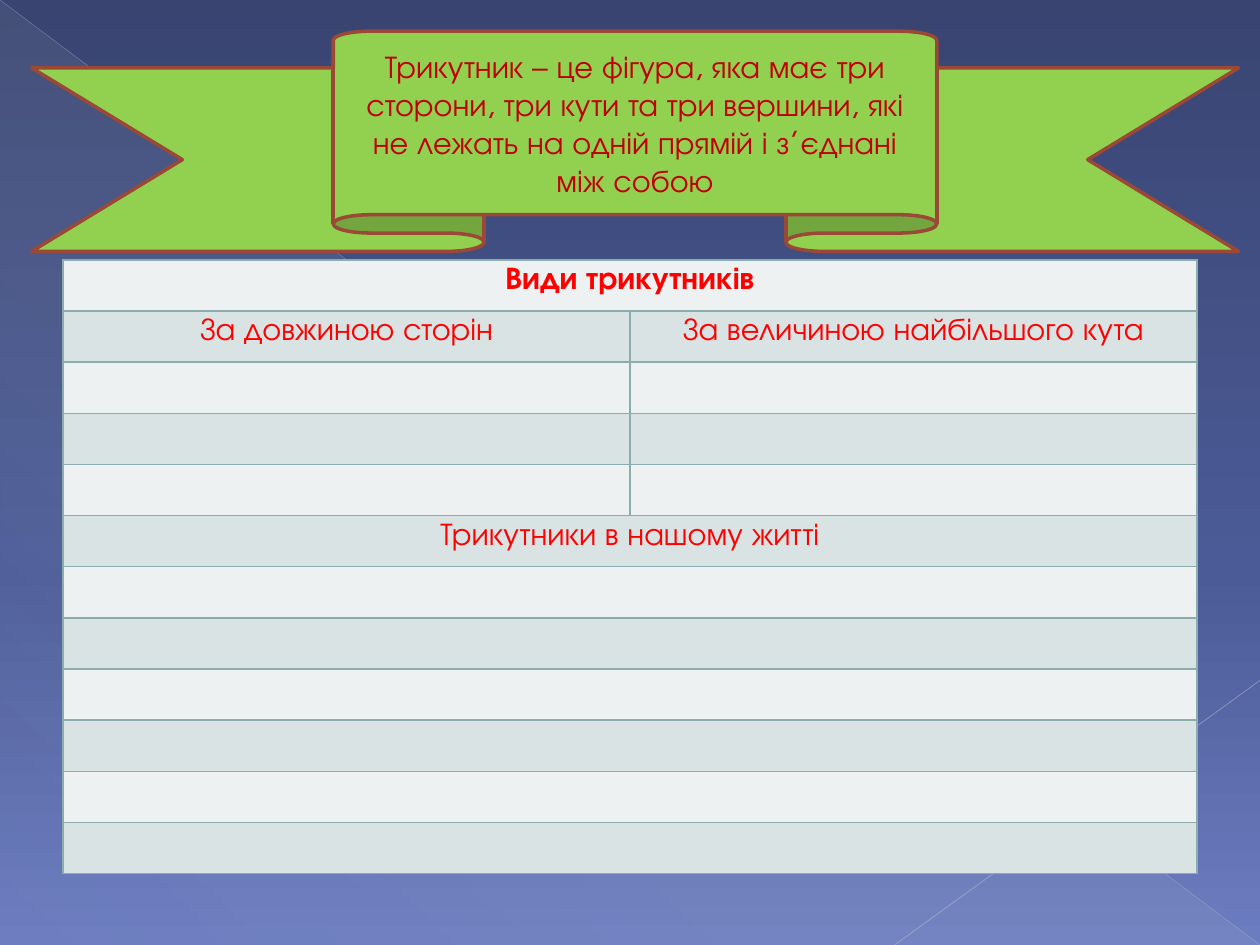
from dataclasses import dataclass
from lxml.etree import SubElement as Sub
from pptx import Presentation
from pptx.dml.color import RGBColor as Rgb
from pptx.enum.shapes import MSO_CONNECTOR as Conn, MSO_SHAPE as Form
from pptx.enum.text import MSO_ANCHOR as Anchor, PP_ALIGN as Align
from pptx.oxml.ns import qn
from pptx.util import Inches, Pt


@dataclass(frozen=True)
class Theme:
    font: str = "TeX Gyre Adventor"
    size: int = 18
    sky: tuple = ((0, "394471", 100), (60, "4B5B97", 100), (100, "6C7CC0", 100))
    haze: tuple = ((0, "C5D1D7", 10), (70, "C5D1D7", 8), (100, "C5D1D7", 1))
    bands: tuple = ("EEF1F2", "DAE3E3")
    grid: str = "8CADAE"
    head: str = "FF0000"
    green: str = "92D050"
    edge: str = "9B4936"
    note: str = "C00000"


T = Theme()
WIDE, HIGH = Inches(10), Inches(7.5)
ROWS = 12
HEADS = {
    0: ["Види трикутників"],
    1: ["За довжиною сторін", "За величиною найбільшого кута"],
    5: ["Трикутники в нашому житті"],
}
SPLIT = range(1, 5)  # rows that keep two columns
RULE = ("Трикутник – це фігура, яка має три сторони, три кути та три вершини, "
        "які не лежать на одній прямій і з’єднані між собою")


def area(left, top, width, height):
    """Turn shares of the slide into a box of lengths."""
    return int(left * WIDE), int(top * HIGH), int(width * WIDE), int(height * HIGH)


def tint(node, color, alpha):
    """Add a colour with an opacity in percent."""
    clr = Sub(node, qn("a:srgbClr"), val=color)
    if alpha < 100:
        Sub(clr, qn("a:alpha"), val=str(alpha * 1000))


def blend(fill, root, stops, angle):
    """Give a fill gradient stops; the angle runs clockwise."""
    fill.gradient()
    fill.gradient_angle = 360 - angle
    group = next(root.iter(qn("a:gsLst")))
    for old in list(group):
        group.remove(old)
    for pos, color, alpha in stops:
        tint(Sub(group, qn("a:gs"), pos=str(pos * 1000)), color, alpha)


def write(frame, text, color, bold=False):
    frame.text = text
    for para in frame.paragraphs:
        para.alignment = Align.CENTER
        for run in para.runs:
            font = run.font
            font.name, font.size, font.bold = T.font, Pt(T.size), bold
            font.color.rgb = Rgb.from_string(color)


def ray(slide, start, end, color, width, alpha):
    """Draw a faint line between two points given as shares of the slide."""
    (x1, y1), (x2, y2) = start, end
    line = slide.shapes.add_connector(
        Conn.STRAIGHT, int(x1 * WIDE), int(y1 * HIGH), int(x2 * WIDE), int(y2 * HIGH))
    line.line.width = Pt(width)
    line.line.fill.solid()
    line.line.color.rgb = Rgb.from_string(color)
    props = line._element.spPr
    clr = next(props.iter(qn("a:srgbClr")))
    Sub(clr, qn("a:alpha"), val=str(alpha * 1000))
    Sub(props, qn("a:effectLst"))


def backdrop(slide):
    blend(slide.background.fill, slide._element, T.sky, 90)
    haze = slide.shapes.add_shape(Form.RIGHT_TRIANGLE, *area(0, 0, 1, 1))
    haze.shadow.inherit = False
    haze.line.fill.background()
    blend(haze.fill, haze._element, T.haze, 133)
    ray(slide, (0, 0), (1, 1), "BABECD", 0.39, 35)
    ray(slide, (1, 0.72), (0.71, 1), "C2C5D2", 0.47, 45)


def border(cell):
    props = cell._tc.get_or_add_tcPr()
    for side in ("lnL", "lnR", "lnT", "lnB"):
        line = Sub(props, qn("a:" + side), w=str(Pt(1)))
        tint(Sub(line, qn("a:solidFill")), T.grid, 100)


def chart(slide, box):
    """Place the table of triangle kinds, with room to fill in."""
    table = slide.shapes.add_table(ROWS, 2, *box).table
    for idx, row in enumerate(table.rows):
        row.height = box[3] // ROWS
        for cell in row.cells:
            border(cell)
            cell.fill.solid()
            cell.fill.fore_color.rgb = Rgb.from_string(T.bands[idx % 2])
        if idx not in SPLIT:
            table.cell(idx, 0).merge(table.cell(idx, 1))
        for cell, text in zip(row.cells, HEADS.get(idx, [])):
            write(cell.text_frame, text, T.head, bold=idx == 0)


def banner(slide, box):
    shape = slide.shapes.add_shape(Form.UP_RIBBON, *box)
    shape.shadow.inherit = False
    shape.fill.solid()
    shape.fill.fore_color.rgb = Rgb.from_string(T.green)
    shape.line.color.rgb = Rgb.from_string(T.edge)
    shape.line.width = Pt(2)
    frame = shape.text_frame
    frame.word_wrap = True
    frame.vertical_anchor = Anchor.MIDDLE
    write(frame, RULE, T.note)


def main():
    deck = Presentation()
    deck.slide_width, deck.slide_height = WIDE, HIGH
    slide = deck.slides.add_slide(deck.slide_layouts[6])
    backdrop(slide)
    chart(slide, area(0.05, 0.275, 0.9, 0.65))
    banner(slide, area(0.025, 0.033, 0.958, 0.233))
    deck.save("out.pptx")


if __name__ == "__main__":
    main()
